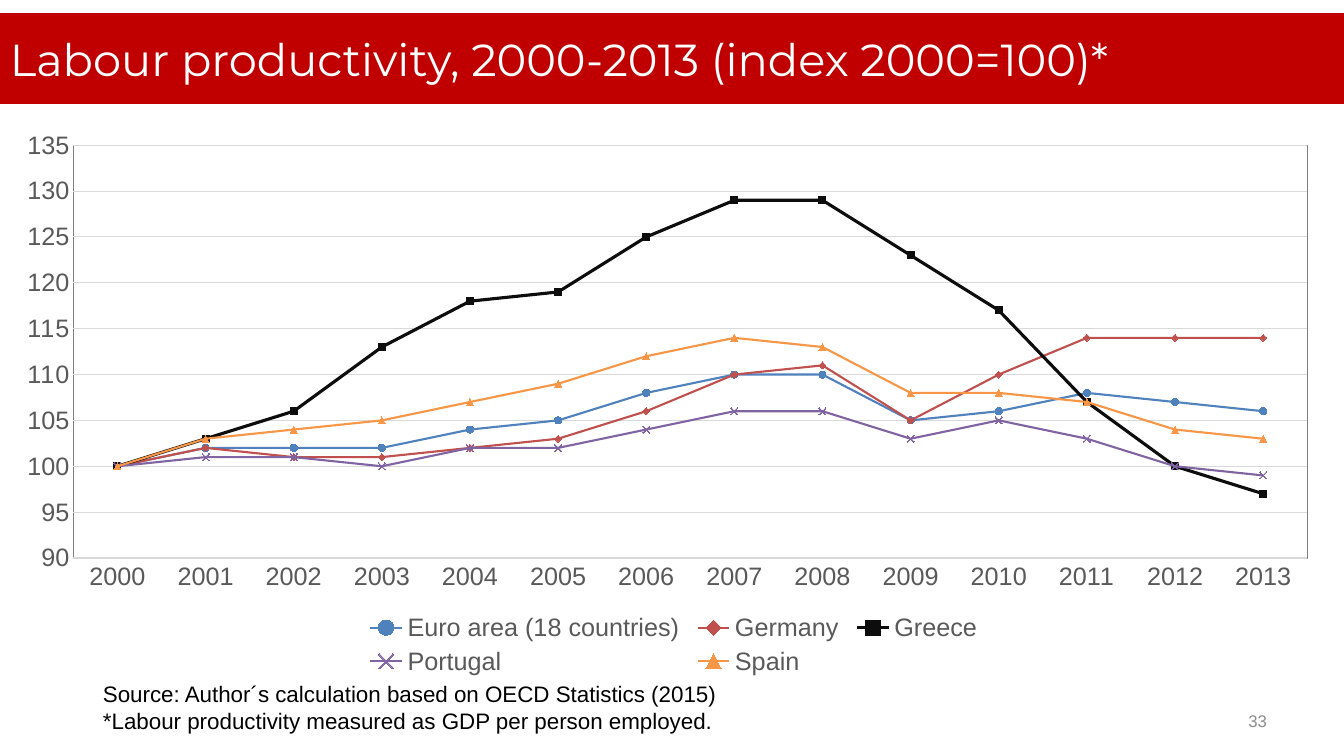
"""Build the slide on labour productivity in the euro area, 2000-2013."""
import pptx
import pptx.chart.data
import pptx.dml.color
import pptx.enum.chart
import pptx.enum.shapes
import pptx.enum.text
import pptx.oxml
import pptx.util

RGBColor = pptx.dml.color.RGBColor
Marker = pptx.enum.chart.XL_MARKER_STYLE
Align = pptx.enum.text.PP_ALIGN
Anchor = pptx.enum.text.MSO_ANCHOR

RED = RGBColor(0xC0, 0x00, 0x00)
WHITE = RGBColor(0xFF, 0xFF, 0xFF)
BLACK = RGBColor(0x00, 0x00, 0x00)
LABEL_GREY = RGBColor(0x59, 0x59, 0x59)
GRID_GREY = RGBColor(0xD9, 0xD9, 0xD9)
NUMBER_GREY = RGBColor(0x8C, 0x8C, 0x8C)
BLUE = RGBColor(0x4F, 0x81, 0xBD)
BRICK = RGBColor(0xC0, 0x50, 0x4D)
INK = RGBColor(0x0D, 0x0D, 0x0D)
PURPLE = RGBColor(0x80, 0x64, 0xA2)
ORANGE = RGBColor(0xF7, 0x96, 0x46)

PX = 914400 / 100.8
CHART_NS = "http://schemas.openxmlformats.org/drawingml/2006/chart"
DRAWING_NS = "http://schemas.openxmlformats.org/drawingml/2006/main"

YEARS = [str(year) for year in range(2000, 2014)]
COUNTRIES = [
    ("Euro area (18 countries)", BLUE, 1.5, Marker.CIRCLE,
     [100, 102, 102, 102, 104, 105, 108, 110, 110, 105, 106, 108, 107, 106]),
    ("Germany", BRICK, 1.5, Marker.DIAMOND,
     [100, 102, 101, 101, 102, 103, 106, 110, 111, 105, 110, 114, 114, 114]),
    ("Greece", INK, 2.25, Marker.SQUARE,
     [100, 103, 106, 113, 118, 119, 125, 129, 129, 123, 117, 107, 100, 97]),
    ("Portugal", PURPLE, 1.5, Marker.X,
     [100, 101, 101, 100, 102, 102, 104, 106, 106, 103, 105, 103, 100, 99]),
    ("Spain", ORANGE, 1.5, Marker.TRIANGLE,
     [100, 103, 104, 105, 107, 109, 112, 114, 113, 108, 108, 107, 104, 103]),
]


def px(*lengths):
    """Turn pixel lengths into EMU."""
    return [pptx.util.Emu(round(length * PX)) for length in lengths]


def style_font(font, size, color, name="Arial"):
    """Set size, colour and typeface of a font."""
    font.size = pptx.util.Pt(size)
    font.color.rgb = color
    font.name = name


def style_line(line, color, width):
    """Set colour and width of a line."""
    line.color.rgb = color
    line.width = pptx.util.Pt(width)


def write(box, text, size, color, name="Arial", align=Align.LEFT, anchor=Anchor.TOP):
    """Fill a box with one paragraph per line of text."""
    frame = box.text_frame
    frame.word_wrap = True
    frame.vertical_anchor = anchor
    for index, line in enumerate(text.split("\n")):
        para = frame.add_paragraph() if index else frame.paragraphs[0]
        para.alignment = align
        span = para.add_run()
        span.text = line
        style_font(span.font, size, color, name)


def add_banner(page, text, place):
    """Add the coloured title bar."""
    bar = page.shapes.add_shape(pptx.enum.shapes.MSO_SHAPE.RECTANGLE, *px(*place))
    bar.shadow.inherit = False
    bar.fill.solid()
    bar.fill.fore_color.rgb = RED
    bar.line.fill.background()
    write(bar, text, 32, WHITE, name="Montserrat", anchor=Anchor.MIDDLE)


def add_text(page, text, place, **form):
    """Add a text box."""
    write(page.shapes.add_textbox(*px(*place)), text, **form)


def set_layout(element, index, x, y, w, h, target=""):
    """Place a chart part by fractions of the chart's size."""
    for old in element.findall(f"{{{CHART_NS}}}layout"):
        element.remove(old)
    inner = f'<c:layoutTarget val="{target}"/>' if target else ""
    modes = '<c:xMode val="edge"/><c:yMode val="edge"/>'
    sizes = f'<c:x val="{x}"/><c:y val="{y}"/><c:w val="{w}"/><c:h val="{h}"/>'
    element.insert(index, pptx.oxml.parse_xml(
        f'<c:layout xmlns:c="{CHART_NS}"><c:manualLayout>{inner}{modes}{sizes}'
        '</c:manualLayout></c:layout>'))


def frame_plot(plot_area):
    """Draw a thin grey frame around the plot."""
    plot_area.append(pptx.oxml.parse_xml(
        f'<c:spPr xmlns:c="{CHART_NS}" xmlns:a="{DRAWING_NS}"><a:noFill/>'
        '<a:ln w="9525"><a:solidFill><a:srgbClr val="7F7F7F"/></a:solidFill></a:ln></c:spPr>'))


def style_axes(chart):
    """Format both axes and the gridlines."""
    for axis in (chart.category_axis, chart.value_axis):
        axis.major_tick_mark = axis.minor_tick_mark = pptx.enum.chart.XL_TICK_MARK.NONE
        style_font(axis.tick_labels.font, 18, LABEL_GREY)
    style_line(chart.category_axis.format.line, GRID_GREY, 0.75)
    values = chart.value_axis
    values.minimum_scale, values.maximum_scale, values.major_unit = 90, 135, 5
    values.format.line.fill.background()
    values.has_major_gridlines = True
    style_line(values.major_gridlines.format.line, GRID_GREY, 0.75)


def style_series(series, color, width, symbol):
    """Format one country's line and markers."""
    series.smooth = False
    style_line(series.format.line, color, width)
    marker = series.marker
    marker.style = symbol
    marker.size = 5
    if symbol == Marker.X:
        marker.format.fill.background()
    else:
        marker.format.fill.solid()
        marker.format.fill.fore_color.rgb = color
    style_line(marker.format.line, color, 0.75)


def add_productivity_chart(page, place):
    """Add the line chart of all countries."""
    data = pptx.chart.data.CategoryChartData(number_format="0")
    data.categories = YEARS
    for name, *_, values in COUNTRIES:
        data.add_series(name, values)
    kind = pptx.enum.chart.XL_CHART_TYPE.LINE_MARKERS
    chart = page.shapes.add_chart(kind, *px(*place), data).chart
    chart.has_title = False
    style_font(chart.font, 18, BLACK)
    chart.plots[0].vary_by_categories = False
    style_axes(chart)
    for series, (_, color, width, symbol, _) in zip(chart.plots[0].series, COUNTRIES):
        style_series(series, color, width, symbol)
    chart.has_legend = True
    legend = chart.legend
    legend.position = pptx.enum.chart.XL_LEGEND_POSITION.BOTTOM
    legend.include_in_layout = False
    style_font(legend.font, 18, LABEL_GREY)
    set_layout(legend._element, 1, 0.27, 0.87, 0.47, 0.13)
    plot_area = chart._chartSpace.chart.plotArea
    set_layout(plot_area, 0, 0.055, 0.045, 0.925, 0.736, target="inner")
    frame_plot(plot_area)


def main():
    """Build and save the slide."""
    deck = pptx.Presentation()
    deck.slide_width, deck.slide_height = px(1344, 756)
    page = deck.slides.add_slide(deck.slide_layouts[6])
    add_banner(page, "Labour productivity, 2000-2013 (index 2000=100)*", (0, 13, 1344, 91))
    add_productivity_chart(page, (0, 120, 1334, 561))
    add_text(page, "Source: Author´s calculation based on OECD Statistics (2015)\n"
             "*Labour productivity measured as GDP per person employed.",
             (93, 675, 1159, 65), size=16, color=BLACK)
    add_text(page, "33", (964, 701, 313, 40), size=12, color=NUMBER_GREY,
             align=Align.RIGHT, anchor=Anchor.MIDDLE)
    deck.save("out.pptx")


if __name__ == "__main__":
    main()
